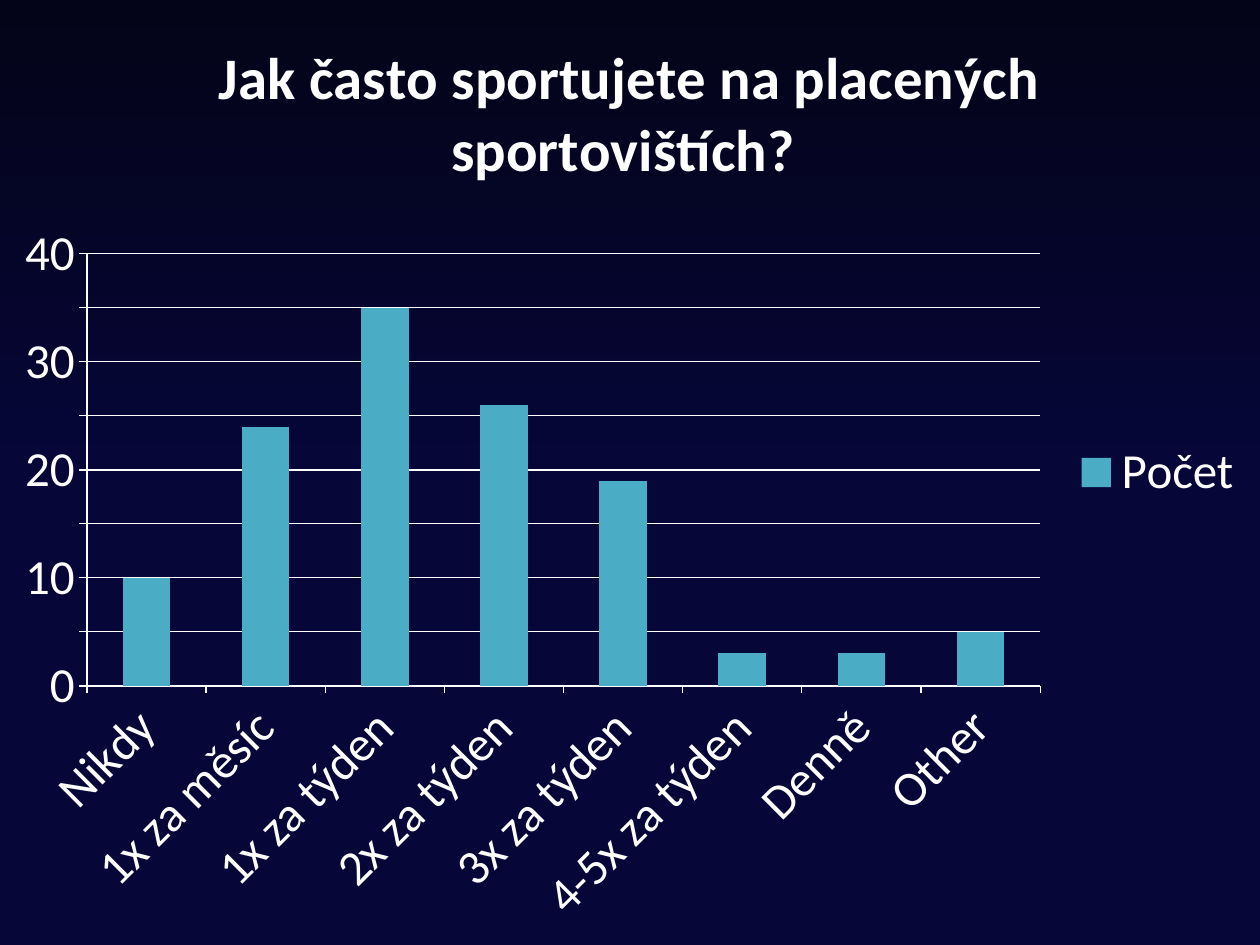
from typing import NamedTuple

from pptx import Presentation
from pptx.chart.data import CategoryChartData as Data
from pptx.dml.color import RGBColor
from pptx.enum.chart import XL_CHART_TYPE as Kind, XL_LEGEND_POSITION as Side, XL_TICK_MARK as Tick
from pptx.util import Emu, Pt

SCALE = 914400 // 126
WIDE, HIGH = 1260, 945
WHITE, TEAL = "FFFFFF", "4BACC6"
NIGHT, NAVY = "040419", "060638"
TITLE = "Jak často sportujete na placených sportovištích? "


class Bar(NamedTuple):
    name: str
    count: int


BARS = [
    Bar("Nikdy", 10),
    Bar("1x za měsíc", 24),
    Bar("1x za týden", 35),
    Bar("2x za týden", 26),
    Bar("3x za týden", 19),
    Bar("4-5x za týden", 3),
    Bar("Denně", 3),
    Bar("Other", 5),
]


def px(n: int) -> Emu:
    return Emu(n * SCALE)


def color(code: str) -> RGBColor:
    return RGBColor.from_string(code)


def assign(item, values: dict) -> None:
    for name, value in values.items():
        setattr(item, name, value)


def style(font, size: float, bold: bool = False) -> None:
    assign(font, {"name": "Calibri", "size": Pt(size), "bold": bold})
    font.color.rgb = color(WHITE)


def rule(line) -> None:
    line.color.rgb = color(WHITE)
    line.width = Pt(0.75)


def shade(slide) -> None:
    """Fill the background from near black at the top to navy halfway down."""
    fill = slide.background.fill
    fill.gradient()
    fill.gradient_angle = 270
    for stop, code, place in zip(fill.gradient_stops, (NIGHT, NAVY), (0, 0.5)):
        stop.color.rgb = color(code)
        stop.position = place


def plot(slide) -> None:
    data = Data()
    data.categories = [bar.name for bar in BARS]
    data.add_series("Počet", [bar.count for bar in BARS])
    chart = slide.shapes.add_chart(
        Kind.COLUMN_CLUSTERED, 0, 0, px(WIDE), px(HIGH), data
    ).chart
    style(chart.font, 28)

    chart.has_title = True
    frame = chart.chart_title.text_frame
    frame.text = TITLE
    style(frame.paragraphs[0].runs[0].font, 33.6, True)
    chart.chart_title.include_in_layout = False

    chart.has_legend = True
    assign(chart.legend, {"position": Side.RIGHT, "include_in_layout": False})
    style(chart.legend.font, 28)

    for axis in (chart.category_axis, chart.value_axis):
        axis.major_tick_mark = Tick.OUTSIDE
        style(axis.tick_labels.font, 28)
        rule(axis.format.line)
    scale = {"minimum_scale": 0, "maximum_scale": 40, "major_unit": 5}
    assign(chart.value_axis, scale)
    rule(chart.value_axis.major_gridlines.format.line)

    group = chart.plots[0]
    assign(group, {"gap_width": 150, "vary_by_categories": False})
    fill = group.series[0].format.fill
    fill.solid()
    fill.fore_color.rgb = color(TEAL)


def main() -> None:
    deck = Presentation()
    assign(deck, {"slide_width": px(WIDE), "slide_height": px(HIGH)})
    slide = deck.slides.add_slide(deck.slide_layouts[6])
    shade(slide)
    plot(slide)
    deck.save("out.pptx")


if __name__ == "__main__":
    main()
